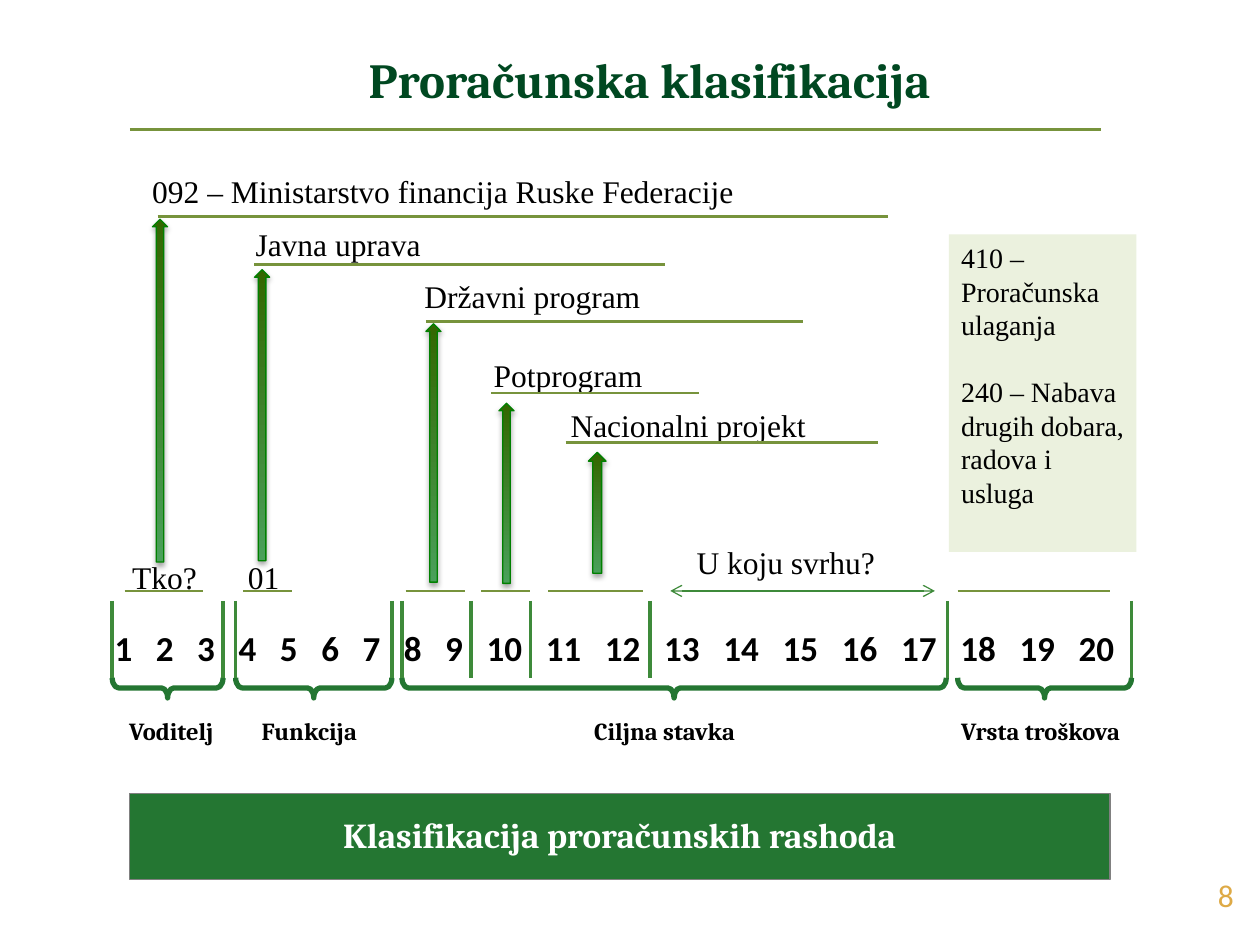
import pptx
import pptx.util
import pptx.dml.color
import pptx.enum.shapes
import pptx.enum.text
import pptx.oxml
import pptx.oxml.ns

# The grid has 100 columns and 75 rows; one cell is a tenth of an inch.
COLS, ROWS = 100, 75
WIDE, HIGH = pptx.util.Inches(10), pptx.util.Inches(7.5)
SHAPES = pptx.enum.shapes.MSO_SHAPE
ALIGN = pptx.enum.text.PP_ALIGN
ANCHOR = pptx.enum.text.MSO_ANCHOR
SERIF, HEAD, SANS = "Times New Roman", "Cambria", "Calibri"
GREEN, OLIVE, LEAF = "247632", "77933C", "3E8A3A"
BLACK, WHITE = "000000", "FFFFFF"
NS = 'xmlns:a="http://schemas.openxmlformats.org/drawingml/2006/main"'


def col(n):
    return round(WIDE * n / COLS)


def row(n):
    return round(HIGH * n / ROWS)


def box(x, y, w, h):
    return col(x), row(y), col(w), row(h)


def paint(part, color):
    """Set a solid colour on a fill, a line's fill or a font's fill."""
    part.solid()
    part.fore_color.rgb = pptx.dml.color.RGBColor.from_string(color)


def xml(text):
    return pptx.oxml.parse_xml(text.replace(">", f" {NS}>", 1))


def write(shape, text, size=18, font=SERIF, color=BLACK, bold=False,
          align=ALIGN.LEFT, anchor=ANCHOR.TOP, wrap=True, gap=0, tabs=(), left=1):
    """Fill a shape with text; gap is the space in points between paragraphs."""
    frame = shape.text_frame
    frame.word_wrap, frame.vertical_anchor = wrap, anchor
    frame.margin_left = col(left)
    for i, words in enumerate(text.split("\n")):
        para = frame.add_paragraph() if i else frame.paragraphs[0]
        if tabs:
            stops = xml("<a:tabLst></a:tabLst>")
            for stop in tabs:
                stops.append(xml(f'<a:tab pos="{col(stop)}" algn="l"></a:tab>'))
            para._p.get_or_add_pPr().append(stops)
        para.alignment = align
        if i:
            para.space_before = pptx.util.Pt(gap)
        run = para.add_run()
        run.text = words
        run.font.size, run.font.name = pptx.util.Pt(size), font
        run.font.bold = bold
        paint(run.font.fill, color)


def label(slide, text, x, y, w, h=4, **form):
    write(slide.shapes.add_textbox(*box(x, y, w, h)), text, **form)


def block(slide, kind, place, fill=None, line=None, width=0.75):
    shape = slide.shapes.add_shape(kind, *box(*place))
    shape.shadow.inherit = False
    if fill:
        paint(shape.fill, fill)
    else:
        shape.fill.background()
    if line:
        paint(shape.line.fill, line)
        shape.line.width = pptx.util.Pt(width)
    else:
        shape.line.fill.background()
    return shape


def rule(slide, x1, y1, x2, y2, color=OLIVE, width=1.5, heads=False):
    line = slide.shapes.add_connector(
        pptx.enum.shapes.MSO_CONNECTOR.STRAIGHT, col(x1), row(y1), col(x2), row(y2))
    paint(line.line.fill, color)
    line.line.width = pptx.util.Pt(width)
    if heads:
        pen = line.line._get_or_add_ln()
        for end in ("headEnd", "tailEnd"):
            pen.append(xml(f'<a:{end} type="arrow"></a:{end}>'))
    line._element.spPr.append(xml("<a:effectLst></a:effectLst>"))


def brace(slide, x1, x2, y, deep=1.6):
    """Draw a brace that opens upwards from column x1 to x2."""
    span, mid = x2 - x1, (x1 + x2) / 2
    place = mid - deep / 2, y - span / 2, deep, span
    shape = block(slide, SHAPES.RIGHT_BRACE, place, line=GREEN, width=3)
    shape.rotation = 90
    shape.adjustments[0], shape.adjustments[1] = 0.311, 0.5


def arrow(slide, x, y, h, w=1.2):
    shape = block(slide, SHAPES.DOWN_ARROW, (x, y, w, h), line="008000")
    shape.rotation = 180
    shape.fill.gradient()
    shape.fill.gradient_angle = 90
    for stop, color in zip(shape.fill.gradient_stops, ("336600", "4AA05A")):
        stop.color.rgb = pptx.dml.color.RGBColor.from_string(color)
    glow = shape._element.spPr.find(pptx.oxml.ns.qn("a:effectLst"))
    blur, dist = pptx.util.Pt(3.1), pptx.util.Pt(1.8)
    glow.append(xml(
        f'<a:outerShdw blurRad="{blur}" dist="{dist}" dir="5400000" rotWithShape="0">'
        '<a:srgbClr val="000000"><a:alpha val="35000"/></a:srgbClr></a:outerShdw>'))


def digits(slide):
    """Write code places 1 to 20 on tab stops: narrow up to 10, then wide."""
    tabs = [3.28 * min(n, 9) + 4.7 * max(n - 9, 0) for n in range(1, 20)]
    text = "\t".join(str(n) for n in range(1, 21))
    label(slide, text, 7.5, 49.2, 84, 4.4, size=20, font=SANS, bold=True,
          tabs=tabs, left=1.6)


def groups(slide):
    for name, x, w, x1, x2 in (
            ("Voditelj", 8.7, 9.8, 8.9, 17.7),
            ("Funkcija", 14.7, 19.7, 18.7, 31.1),
            ("Ciljna stavka", 37.4, 30.7, 31.9, 75.1),
            ("Vrsta troškova", 75.1, 15, 76, 89.8)):
        brace(slide, x1, x2, 54.6)
        label(slide, name, x, 56.3, w, 3.4, size=14, font=HEAD, bold=True,
              align=ALIGN.CENTER)
    for x in (8.9, 17.7, 18.7, 31.1, 31.9, 37.4, 42.1, 51.6, 75.2, 89.8):
        rule(slide, x, 47.7, x, 53.8, LEAF, 2)


def levels(slide):
    for name, x, y, w, x1, x2, base in (
            ("092 – Ministarstvo financija Ruske Federacije", 11.1, 13.2, 61, 12.5, 70.5, 17.2),
            ("Javna uprava", 19.3, 17.4, 35.4, 20.2, 52.8, 21),
            ("Državni program", 32.7, 21.5, 33.1, 33.8, 63.7, 25.5),
            ("Potprogram", 38.2, 27.8, 19.7, 39, 55.5, 31.2),
            ("Nacionalni projekt", 44.3, 31.7, 26.2, 44.9, 69.7, 35.1)):
        label(slide, name, x, y, w, wrap=name != "Nacionalni projekt")
        rule(slide, x1, base, x2, base)
    for x, y, h in ((12.1, 17.4, 27.2), (20.2, 21.4, 23.1), (33.8, 25.7, 20.5),
                    (39.6, 32, 14.3)):
        arrow(slide, x, y, h)
    arrow(slide, 46.7, 35.9, 9.6, 1.4)
    for x1, x2 in ((9.9, 16.1), (19.3, 23.2), (32.2, 36.9), (38.2, 42.1),
                   (43.5, 51), (76, 88.1)):
        rule(slide, x1, 46.9, x2, 46.9)


def main():
    deck = pptx.Presentation()
    deck.slide_width, deck.slide_height = WIDE, HIGH
    slide = deck.slides.add_slide(deck.slide_layouts[6])

    label(slide, "Proračunska klasifikacija", 16.1, 2.1, 70.9, 8.3, size=28, font=HEAD,
          color="004821", bold=True, align=ALIGN.CENTER, anchor=ANCHOR.MIDDLE)
    rule(slide, 10.3, 10.3, 87.4, 10.3)
    levels(slide)
    label(slide, "Tko?", 9.5, 43.8, 8.2)
    label(slide, "01", 18.7, 43.8, 5.3)
    label(slide, "U koju svrhu?", 54.3, 42.6, 19.3)
    rule(slide, 53.2, 46.9, 74.2, 46.9, LEAF, 0.75, heads=True)
    digits(slide)
    groups(slide)

    note = block(slide, SHAPES.RECTANGLE, (75.3, 18.6, 14.9, 25.2), "EBF1DE")
    write(note, "410 – Proračunska ulaganja\n240 – Nabava drugih dobara, radova i usluga",
          size=16, gap=19)
    band = block(slide, SHAPES.RECTANGLE, (10.3, 63, 77.8, 6.8), GREEN, "808080")
    band.text_frame.margin_top = row(0.1)
    write(band, "Klasifikacija proračunskih rashoda", size=20, font=HEAD, color=WHITE,
          bold=True, align=ALIGN.CENTER, anchor=ANCHOR.MIDDLE)
    label(slide, "8", 93.5, 69, 5.4, font=SANS, color="DEAA46", align=ALIGN.RIGHT)
    deck.save("out.pptx")


if __name__ == "__main__":
    main()
